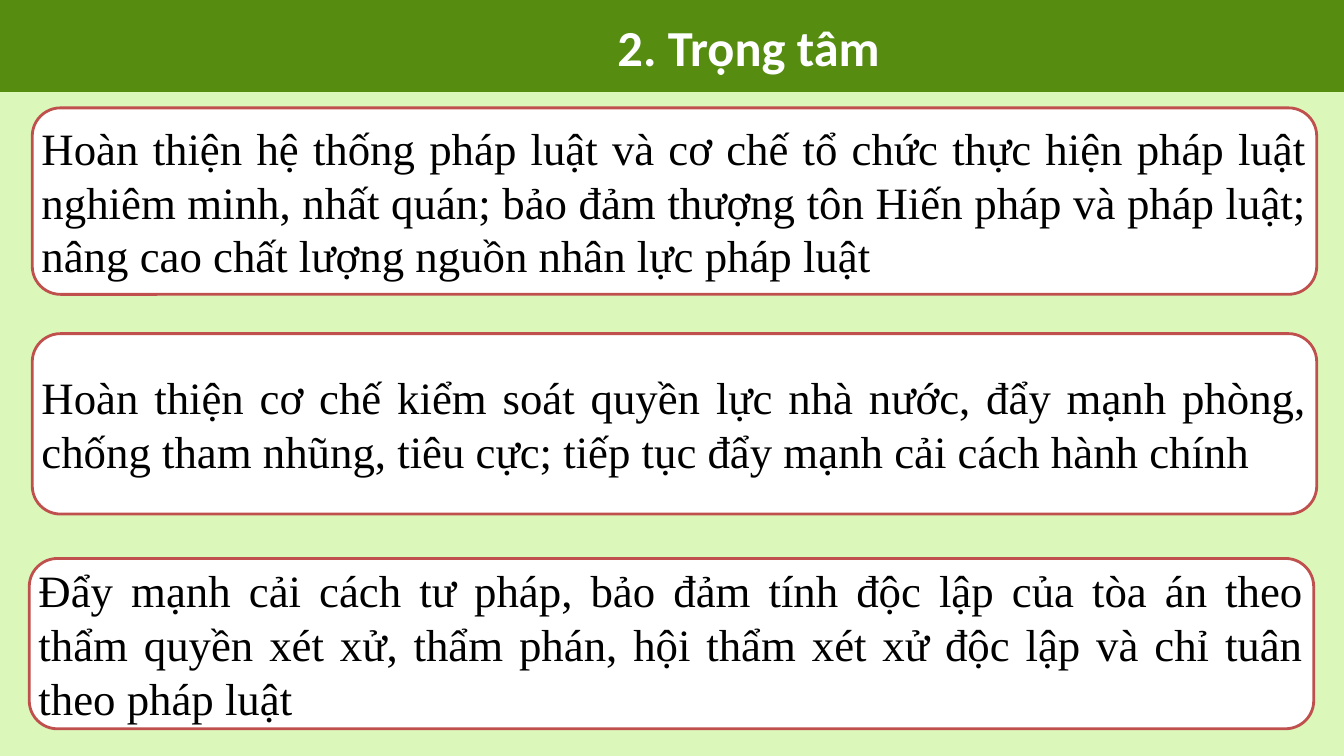
import pptx
import pptx.util
import pptx.dml.color
import pptx.enum.shapes
import pptx.enum.text

Inches = pptx.util.Inches
Pt = pptx.util.Pt
ALIGN = pptx.enum.text.PP_ALIGN
ANCHOR = pptx.enum.text.MSO_ANCHOR
SHAPE = pptx.enum.shapes.MSO_SHAPE

COLORS = {
    "header": "568D11",
    "body": "DCF7BA",
    "card": "FFFFFF",
    "border": "C0504D",
    "title": "FFFFFF",
    "text": "000000",
}
SLIDE_WIDTH = 13.33
SLIDE_HEIGHT = 7.5
HEADER_HEIGHT = 0.92
CARD_WIDTH = 12.74
CORNER_RADIUS = 0.28

CARDS = [
    (0.32, 1.07, 1.85,
     "Hoàn thiện hệ thống pháp luật và cơ chế tổ chức thực hiện pháp luật "
     "nghiêm minh, nhất quán; bảo đảm thượng tôn Hiến pháp và pháp luật; "
     "nâng cao chất lượng nguồn nhân lực pháp luật"),
    (0.32, 3.31, 1.79,
     "Hoàn thiện cơ chế kiểm soát quyền lực nhà nước, đẩy mạnh phòng, "
     "chống tham nhũng, tiêu cực; tiếp tục đẩy mạnh cải cách hành chính"),
    (0.29, 5.54, 1.69,
     "Đẩy mạnh cải cách tư pháp, bảo đảm tính độc lập của tòa án theo "
     "thẩm quyền xét xử, thẩm phán, hội thẩm xét xử độc lập và chỉ tuân "
     "theo pháp luật"),
]


def color(name):
    return pptx.dml.color.RGBColor.from_string(COLORS[name])


def write_text(shape, text, font, size, color_name, align, bold=False):
    frame = shape.text_frame
    frame.word_wrap = True
    frame.text = text
    para = frame.paragraphs[0]
    para.alignment = align
    span = para.runs[0]
    span.font.name = font
    span.font.size = Pt(size)
    span.font.bold = bold
    span.font.color.rgb = color(color_name)


def add_panel(page, kind, left, top, width, height, fill, line=None, weight=0):
    panel = page.shapes.add_shape(
        kind, Inches(left), Inches(top), Inches(width), Inches(height))
    panel.shadow.inherit = False
    panel.fill.solid()
    panel.fill.fore_color.rgb = color(fill)
    if line:
        panel.line.color.rgb = color(line)
        panel.line.width = Pt(weight)
    else:
        panel.line.fill.background()
    return panel


def add_title(page, text):
    box = page.shapes.add_textbox(
        Inches(1.64), Inches(0.11), Inches(11.53), Inches(0.71))
    box.text_frame.margin_left = Inches(0.14)
    write_text(box, text, "Calibri", 36, "title", ALIGN.CENTER, bold=True)


def add_card(page, left, top, height, text):
    card = add_panel(page, SHAPE.ROUNDED_RECTANGLE,
                     left, top, CARD_WIDTH, height, "card", "border", 2)
    card.adjustments[0] = CORNER_RADIUS / height
    frame = card.text_frame
    frame.vertical_anchor = ANCHOR.MIDDLE
    frame.margin_left = frame.margin_right = Inches(0.01)
    frame.margin_top = frame.margin_bottom = 0
    write_text(card, text, "Times New Roman", 32, "text", ALIGN.JUSTIFY)


def main():
    deck = pptx.Presentation()
    deck.slide_width = Inches(SLIDE_WIDTH)
    deck.slide_height = Inches(SLIDE_HEIGHT)
    page = deck.slides.add_slide(deck.slide_layouts[6])
    add_panel(page, SHAPE.RECTANGLE, 0, 0, SLIDE_WIDTH, SLIDE_HEIGHT, "header")
    add_panel(page, SHAPE.RECTANGLE, 0, HEADER_HEIGHT, SLIDE_WIDTH,
              SLIDE_HEIGHT - HEADER_HEIGHT, "body", "body", 1.25)
    add_title(page, "2. Trọng tâm")
    for card in CARDS:
        add_card(page, *card)
    deck.save("out.pptx")


if __name__ == "__main__":
    main()
